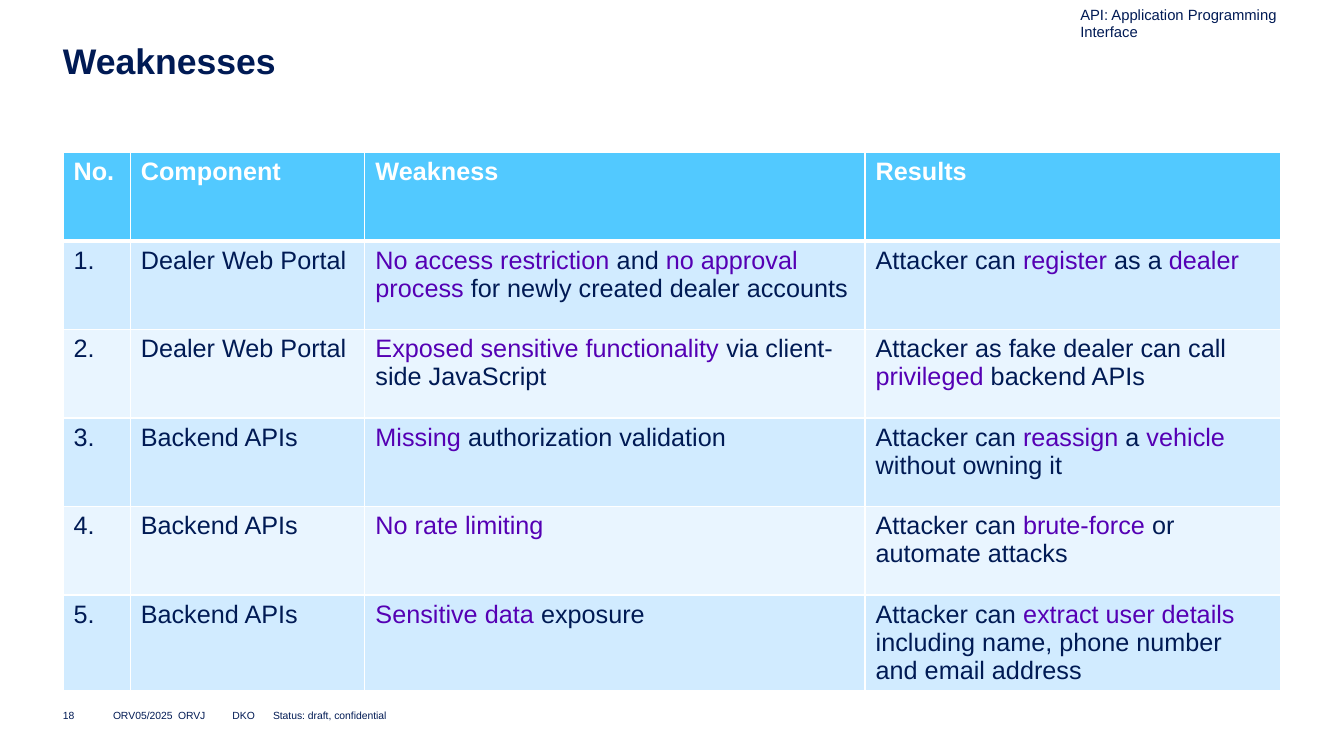
"""Build the Weaknesses slide with its table of components, weaknesses and results."""
from dataclasses import dataclass

from lxml.etree import SubElement
from pptx import Presentation
from pptx.dml.color import RGBColor as Rgb
from pptx.enum.text import MSO_ANCHOR as Anchor
from pptx.oxml.ns import qn
from pptx.util import Inches, Pt

FONT = "Arial"
NAVY, PURPLE, WHITE = "001A54", "5500B4", "FFFFFF"
HEADER_FILL, BAND_FILLS = "52C9FF", ("D1EBFF", "E9F5FF")
GRID_COLUMNS, GRID_ROWS = 126, 70.9
TABLE_LEFT, TABLE_TOP, ROW_HEIGHT = 5.9, 14.3, 8.3
TABLE_COLUMNS = (6.3, 22, 46.9, 39)
HEADINGS = ("No.", "Component", "Weakness", "Results")


@dataclass(frozen=True)
class Label:
    text: str
    left: float
    top: float
    width: float
    height: float
    size: float
    bold: bool = False
    inset: bool = False
    anchor: Anchor = Anchor.TOP
    line_spacing: float = 1.0
    tab_stops: tuple[float, ...] = ()


@dataclass(frozen=True)
class Finding:
    component: str
    weakness: str
    result: str


LABELS = (
    Label("Weaknesses", 5.9, 3.9, 114.2, 4, 24, bold=True, line_spacing=0.97),
    Label("18", 5.9, 66.1, 3.9, 2, 7, anchor=Anchor.MIDDLE),
    Label("ORV\t05/2025\tORVJ\tDKO\tStatus: draft, confidential", 10.6, 66.1, 50.4, 2, 7,
          anchor=Anchor.MIDDLE, tab_stops=(2.1, 6.1, 8.6, 11.2)),
    Label("API: Application Programming Interface", 100.3, 0, 25.7, 2.7, 10, inset=True),
)

FINDINGS = (
    Finding("Dealer Web Portal",
            "*No access restriction* and *no approval process* for newly created dealer accounts",
            "Attacker can *register* as a *dealer*"),
    Finding("Dealer Web Portal",
            "*Exposed sensitive functionality *via client-side JavaScript",
            "Attacker as fake dealer can call *privileged* backend APIs"),
    Finding("Backend APIs",
            "*Missing *authorization validation",
            "Attacker can *reassign* a *vehicle* without owning it"),
    Finding("Backend APIs",
            "*No rate limiting*",
            "Attacker can *brute-force* or automate attacks"),
    Finding("Backend APIs",
            "*Sensitive data* exposure",
            "Attacker can *extract user details *including name, phone number and email address"),
)


def grid(units: float) -> int:
    return Inches(units / 10)


def colour(hex_string: str) -> Rgb:
    return Rgb.from_string(hex_string)


def add_runs(paragraph, text: str, size: float, base: str = NAVY, bold: bool = False) -> None:
    for index, piece in enumerate(text.split("*")):
        if piece:
            run = paragraph.add_run()
            run.text = piece
            run.font.name = FONT
            run.font.size = Pt(size)
            run.font.bold = bold
            run.font.color.rgb = colour(PURPLE if index % 2 else base)


def add_tab_stops(paragraph, stops: tuple[float, ...]) -> None:
    tab_list = SubElement(paragraph._p.get_or_add_pPr(), qn("a:tabLst"))
    for stop in stops:
        SubElement(tab_list, qn("a:tab"), pos=str(grid(stop)), algn="l")


def add_label(slide, label: Label) -> None:
    shape = slide.shapes.add_textbox(
        grid(label.left), grid(label.top), grid(label.width), grid(label.height))
    frame = shape.text_frame
    frame.word_wrap = False
    frame.vertical_anchor = label.anchor
    if not label.inset:
        frame.margin_left = frame.margin_right = frame.margin_top = frame.margin_bottom = 0
    paragraph = frame.paragraphs[0]
    paragraph.line_spacing = label.line_spacing
    if label.tab_stops:
        add_tab_stops(paragraph, label.tab_stops)
    add_runs(paragraph, label.text, label.size, bold=label.bold)


def set_borders(cell, top: float, bottom: float) -> None:
    properties = cell._tc.get_or_add_tcPr()
    for edge, width in (("L", 1), ("R", 1), ("T", top), ("B", bottom)):
        line = SubElement(properties, qn(f"a:ln{edge}"), w=str(Pt(width)))
        fill = SubElement(line, qn("a:solidFill"))
        SubElement(fill, qn("a:srgbClr"), val=WHITE)


def add_findings_table(slide, findings: tuple[Finding, ...]) -> None:
    rows = [HEADINGS] + [(f"{number}.", finding.component, finding.weakness, finding.result)
                         for number, finding in enumerate(findings, 1)]
    table = slide.shapes.add_table(
        len(rows), len(TABLE_COLUMNS), grid(TABLE_LEFT), grid(TABLE_TOP),
        grid(sum(TABLE_COLUMNS)), grid(ROW_HEIGHT * len(rows))).table
    table.horz_banding = False
    for column, width in zip(table.columns, TABLE_COLUMNS):
        column.width = grid(width)
    for row_index, texts in enumerate(rows):
        header = row_index == 0
        table.rows[row_index].height = grid(ROW_HEIGHT)
        for column_index, text in enumerate(texts):
            cell = table.cell(row_index, column_index)
            set_borders(cell, top=3 if row_index == 1 else 1, bottom=3 if header else 1)
            cell.fill.solid()
            cell.fill.fore_color.rgb = colour(
                HEADER_FILL if header else BAND_FILLS[(row_index - 1) % 2])
            add_runs(cell.text_frame.paragraphs[0], text, 17, WHITE if header else NAVY, header)


def main() -> None:
    presentation = Presentation()
    presentation.slide_width = grid(GRID_COLUMNS)
    presentation.slide_height = grid(GRID_ROWS)
    slide = presentation.slides.add_slide(presentation.slide_layouts[6])
    add_findings_table(slide, FINDINGS)
    for label in LABELS:
        add_label(slide, label)
    presentation.save("out.pptx")


if __name__ == "__main__":
    main()
